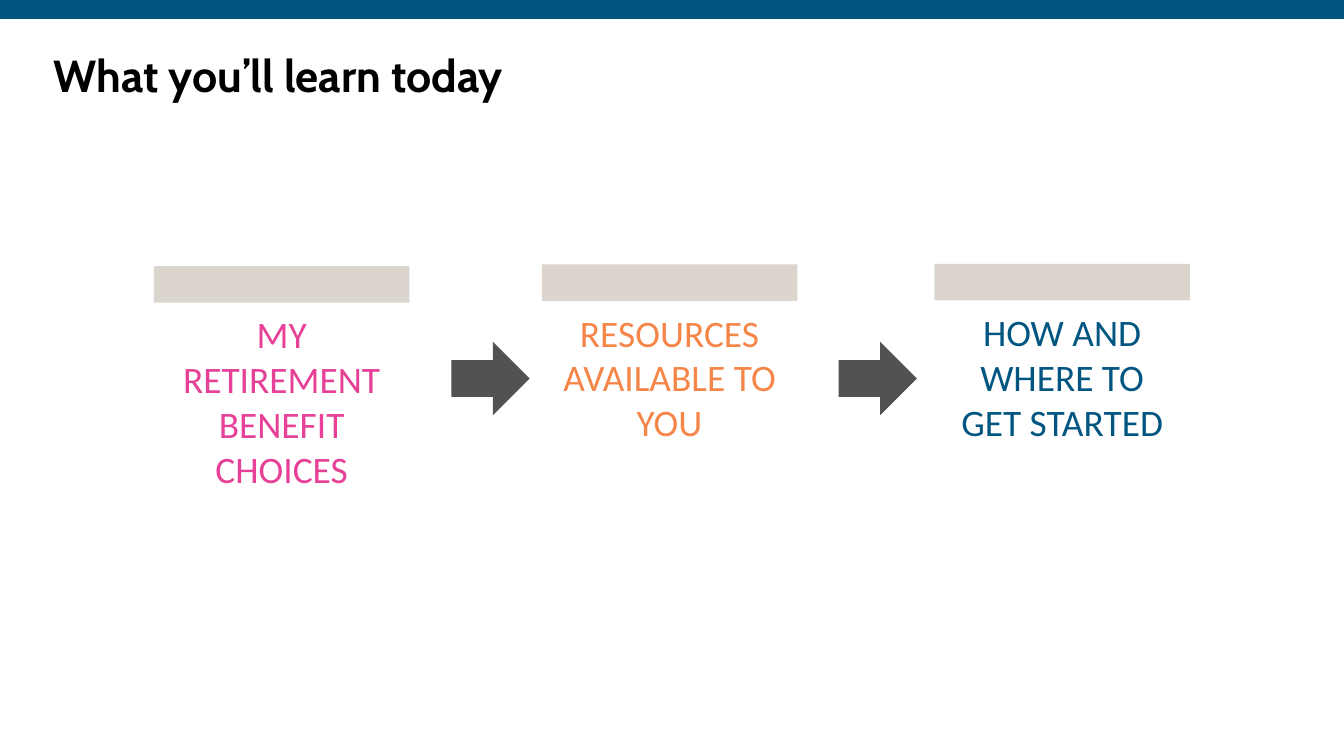
from dataclasses import dataclass

from pptx import Presentation
from pptx.dml.color import RGBColor
from pptx.enum.shapes import MSO_SHAPE
from pptx.enum.text import MSO_ANCHOR, PP_ALIGN
from pptx.util import Cm, Pt

RECT = MSO_SHAPE.RECTANGLE
ARROW = MSO_SHAPE.RIGHT_ARROW
LEFT, CENTER = PP_ALIGN.LEFT, PP_ALIGN.CENTER
TOP, MIDDLE = MSO_ANCHOR.TOP, MSO_ANCHOR.MIDDLE
WIDE, HIGH = 25.4, 14.29


@dataclass(frozen=True)
class Theme:
    blue: str = "005581"
    sand: str = "DBD5CD"
    gray: str = "525252"
    pink: str = "E64097"
    orange: str = "F58648"
    black: str = "000000"
    head: str = "Cabin"
    body: str = "Calibri"
    head_size: int = 24
    body_size: int = 20


class Deck:
    def __init__(self, theme):
        self.theme = theme
        self.file = Presentation()
        self.file.slide_width, self.file.slide_height = Cm(WIDE), Cm(HIGH)
        self.slide = self.file.slides.add_slide(self.file.slide_layouts[6])

    def shape(self, kind, box, color):
        item = self.slide.shapes.add_shape(kind, *map(Cm, box))
        item.shadow.inherit = False
        item.fill.solid()
        item.fill.fore_color.rgb = RGBColor.from_string(color)
        item.line.fill.background()

    def text(self, box, lines, font, size, color, bold=False, align=CENTER, anchor=TOP):
        frame = self.slide.shapes.add_textbox(*map(Cm, box)).text_frame
        frame.word_wrap = True
        frame.vertical_anchor = anchor
        frame.text = "\n".join(lines)
        for para in frame.paragraphs:
            para.alignment = align
            para.font.name, para.font.size, para.font.bold = font, Pt(size), bold
            para.font.color.rgb = RGBColor.from_string(color)

    def title(self, words):
        look = self.theme
        self.text((0.76, 0.84, 23.37, 1.14), [words], look.head, look.head_size,
                  look.black, bold=True, align=LEFT, anchor=MIDDLE)

    def topic(self, left, top, lines, color):
        """Add a sand bar with a caption below it."""
        look = self.theme
        width, bar, gap = 4.83, 0.69, 0.04
        self.shape(RECT, (left, top, width, bar), look.sand)
        self.text((left, top + bar + gap, width, 2.82), lines,
                  look.body, look.body_size, color)

    def arrow(self, left):
        self.shape(ARROW, (left, 6.46, 1.48, 1.39), self.theme.gray)


def main():
    theme = Theme()
    deck = Deck(theme)
    deck.shape(RECT, (0, 0, WIDE, 0.36), theme.blue)
    deck.title("What you’ll learn today")
    topics = [
        (2.91, 5.03, ["MY RETIREMENT", "BENEFIT CHOICES"], theme.pink),
        (10.24, 5.0, ["RESOURCES AVAILABLE TO YOU"], theme.orange),
        (17.66, 4.99, ["HOW AND WHERE TO GET STARTED"], theme.blue),
    ]
    for topic in topics:
        deck.topic(*topic)
    for left in (8.53, 15.85):
        deck.arrow(left)
    deck.file.save("out.pptx")


if __name__ == "__main__":
    main()
